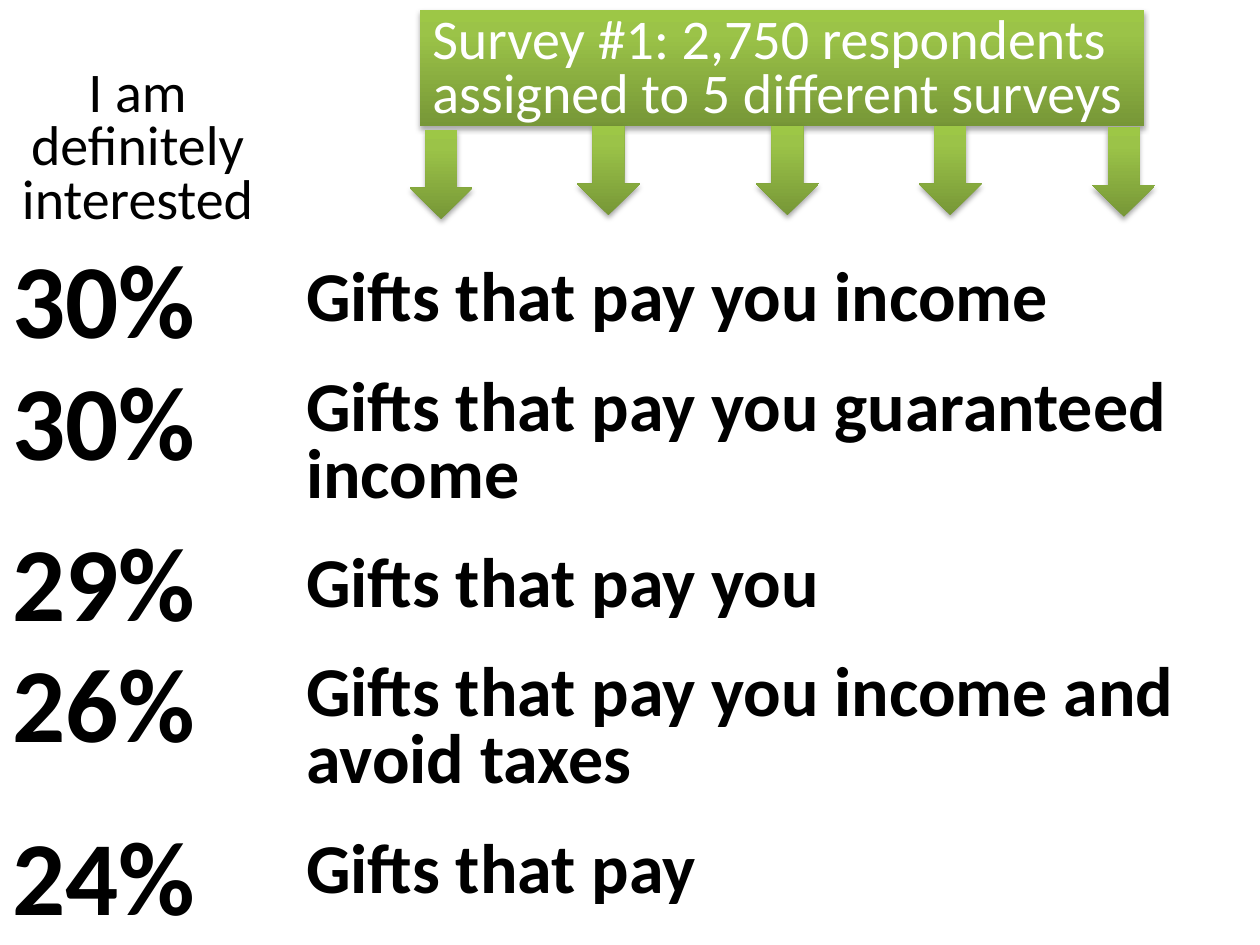
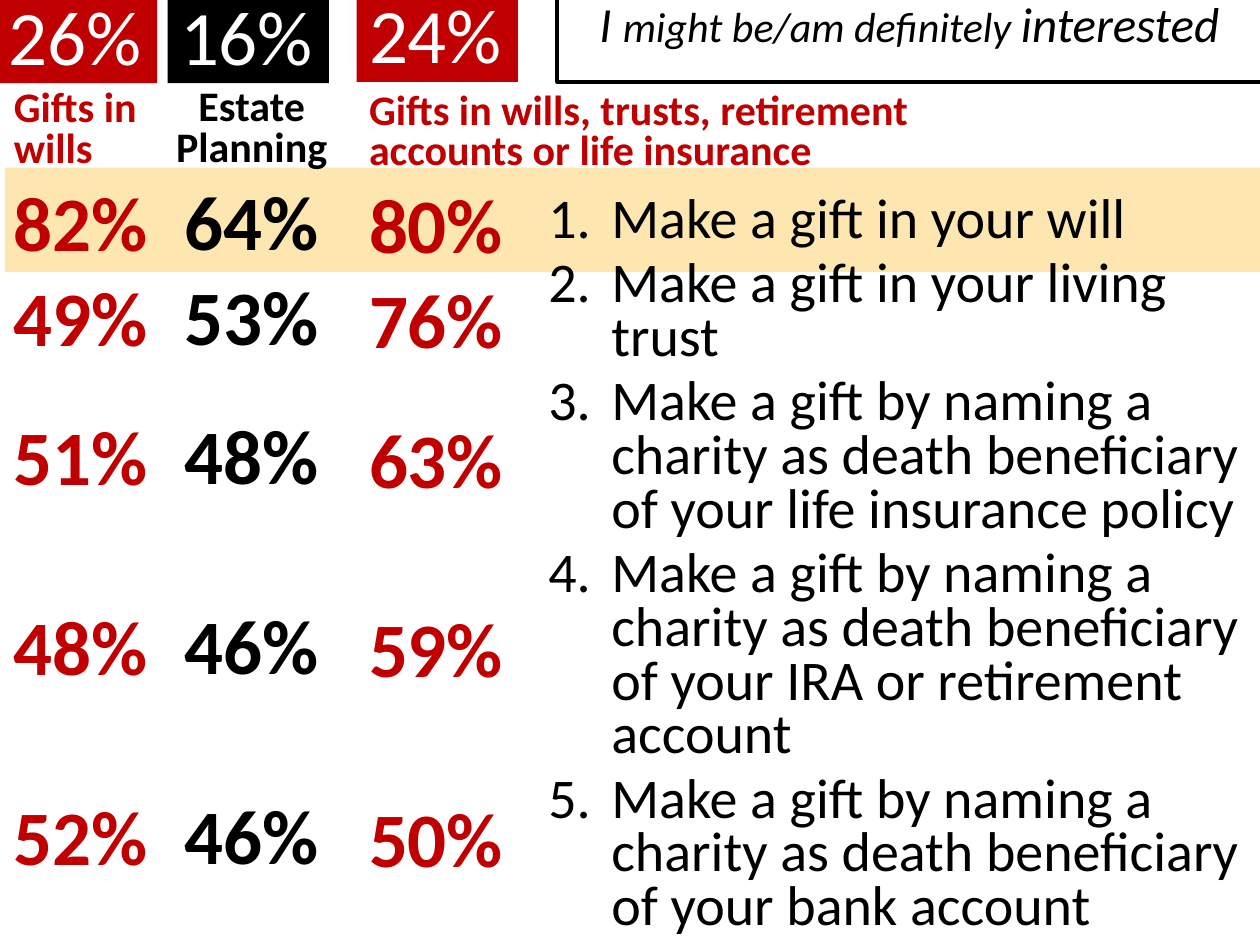
"""Builds two survey slides on interest in planned gifts."""
from copy import deepcopy

from lxml import etree
from pptx import Presentation
from pptx.dml.color import RGBColor
from pptx.enum.shapes import MSO_SHAPE
from pptx.enum.text import MSO_ANCHOR, MSO_AUTO_SIZE, PP_ALIGN
from pptx.oxml.ns import qn
from pptx.util import Cm, Pt

RECTANGLE = MSO_SHAPE.RECTANGLE
DOWN_ARROW = MSO_SHAPE.DOWN_ARROW
TOP = MSO_ANCHOR.TOP
NO_AUTOFIT = MSO_AUTO_SIZE.NONE
LEFT = PP_ALIGN.LEFT
CENTER = PP_ALIGN.CENTER

FONT = "Calibri"
LINE_SPACING = 0.8
COLORS = {
    "black": "000000",
    "white": "FFFFFF",
    "red": "C00000",
    "gold": "FDCE62",
    "dark green": "779737",
    "green": "9BC348",
    "light green": "9DC746",
}
GREEN_STOPS = [(0, "dark green"), (0.8, "green"), (1, "light green")]


def rgb(name):
    return RGBColor.from_string(COLORS[name])


def add_xml(parent, tag, **attributes):
    return etree.SubElement(parent, qn(tag), attributes)


def rows(texts, size, gap):
    return [([(text, size)], gap) for text in texts]


def wide_gap(skipped_size):
    return 24 + 0.96 * skipped_size


class SurveyDeck:
    """Holds the deck style and the current slide."""

    def __init__(self):
        self.deck = Presentation()
        self.deck.slide_width = Cm(25.4)
        self.deck.slide_height = Cm(19.05)
        self.page = None

    def add_page(self):
        self.page = self.deck.slides.add_slide(self.deck.slide_layouts[1])

    def place(self, shape, area):
        shape.left, shape.top, shape.width, shape.height = map(Cm, area)
        return shape

    def fill_text(self, shape, lines, color="black", bold=False, italic=False,
                  align=LEFT, numbered=False):
        frame = shape.text_frame
        frame.word_wrap = True
        frame.auto_size = NO_AUTOFIT
        frame.vertical_anchor = TOP
        for index, (spans, gap) in enumerate(lines):
            para = frame.add_paragraph() if index else frame.paragraphs[0]
            para.alignment = align
            para.line_spacing = LINE_SPACING
            para.space_before = Pt(0)
            para.space_after = Pt(gap)
            self.mark(para, numbered)
            for text, size in spans:
                span = para.add_run()
                span.text = text
                span.font.name = FONT
                span.font.size = Pt(size)
                span.font.bold = bold
                span.font.italic = italic
                span.font.color.rgb = rgb(color)

    def mark(self, para, numbered):
        properties = para._p.get_or_add_pPr()
        indent = Cm(1.27) if numbered else 0
        properties.set("marL", str(indent))
        properties.set("indent", str(-indent))
        if numbered:
            add_xml(properties, "a:buAutoNum", type="arabicPeriod")
        else:
            add_xml(properties, "a:buNone")

    def title(self, area, lines, **style):
        box = self.place(self.page.shapes.title, area)
        self.fill_text(box, lines, **style)
        return box

    def body(self, area, lines, **style):
        self.fill_text(self.place(self.page.placeholders[1], area), lines, **style)

    def text(self, area, lines, **style):
        box = self.page.shapes.add_textbox(*map(Cm, area))
        self.fill_text(box, lines, **style)

    def shape(self, kind, area):
        box = self.page.shapes.add_shape(kind, *map(Cm, area))
        box.shadow.inherit = False
        box.line.fill.background()
        return box

    def tile(self, area, text, color):
        box = self.shape(RECTANGLE, area)
        box.fill.solid()
        box.fill.fore_color.rgb = rgb(color)
        self.fill_text(box, rows([text], 44, 12), color="white")

    def band(self, area, color):
        box = self.shape(RECTANGLE, area)
        box.fill.solid()
        box.fill.fore_color.rgb = rgb(color)
        tint = box._element.spPr.find(".//" + qn("a:srgbClr"))
        add_xml(tint, "a:alpha", val="50000")
        self.page.shapes._spTree.insert(2, box._element)

    def arrow(self, area):
        self.glossy(self.shape(DOWN_ARROW, area))

    def glossy(self, box):
        box.fill.gradient()
        box.fill.gradient_angle = 90
        stop_list = box._element.spPr.find(".//" + qn("a:gsLst"))
        stop_list.append(deepcopy(stop_list[-1]))
        for stop, (position, color) in zip(box.fill.gradient_stops, GREEN_STOPS):
            stop.position = position
            stop.color.rgb = rgb(color)
        box.shadow.inherit = False
        effects = box._element.spPr.find(qn("a:effectLst"))
        shadow = add_xml(effects, "a:outerShdw", blurRad=str(Pt(3.1)),
                         dist=str(Pt(1.8)), dir="5400000", rotWithShape="0")
        shade = add_xml(shadow, "a:srgbClr", val=COLORS["black"])
        add_xml(shade, "a:alpha", val="35000")


def build_gift_wording(survey):
    survey.add_page()
    banner = survey.title(
        (8.46, 0.2, 14.61, 2.34),
        rows(["Survey #1: 2,750 respondents assigned to 5 different surveys"], 32, 24),
        color="white")
    survey.glossy(banner)
    wordings = ["Gifts that pay you income", "Gifts that pay you guaranteed income",
                "Gifts that pay you", "Gifts that pay you income and avoid taxes",
                "Gifts that pay"]
    survey.body((5.92, 5.28, 19.25, 13.34), rows(wordings, 40, 24), bold=True)
    survey.text((0.03, 1.27, 5.49, 3.07),
                rows(["I am definitely interested"], 32, 24), align=CENTER)
    shares = [("30%", 12), ("30%", wide_gap(10.5)), ("29%", 12),
              ("26%", wide_gap(18)), ("24%", 12)]
    survey.text((0, 5.08, 6.15, 12.07),
                [([(share, 60)], gap) for share, gap in shares], bold=True)
    for left, top in [(8.26, 2.62), (11.63, 2.54), (15.24, 2.54),
                      (18.52, 2.54), (22.02, 2.57)]:
        survey.arrow((left, top, 1.27, 1.8))


def build_gift_vehicles(survey):
    survey.add_page()
    survey.band((0.1, 3.38, 25.4, 2.11), "gold")
    interest = survey.title(
        (11.23, -0.03, 14.2, 1.68),
        [([("I ", 28), ("might be/am definitely ", 24), ("interested", 28)], 24)],
        italic=True, align=CENTER)
    interest.line.color.rgb = rgb("black")
    interest.line.width = Pt(2)
    naming = "Make a gift by naming a charity as death beneficiary of your "
    vehicles = ["Make a gift in your will", "Make a gift in your living trust",
                naming + "life insurance policy",
                naming + "IRA or retirement account",
                naming + "bank account"]
    survey.body((10.8, 3.81, 14.63, 1.96), rows(vehicles, 32, 6), numbered=True)

    gaps = [12, wide_gap(14), wide_gap(44), wide_gap(44), 12]
    columns = [
        ((0.03, 1.7, 3.38, 1.42), "Gifts in wills",
         ["82%", "49%", "51%", "48%", "52%"], "red", LEFT),
        ((2.74, 1.68, 4.67, 1.42), "Estate Planning",
         ["64%", "53%", "48%", "46%", "46%"], "black", CENTER),
        ((7.19, 1.75, 11.63, 1.42),
         "Gifts in wills, trusts, retirement accounts or life insurance",
         ["80%", "76%", "63%", "59%", "50%"], "red", LEFT),
    ]
    for area, heading, shares, color, align in columns:
        lines = rows([heading], 24, 12)
        lines += [([(share, 44)], gap) for share, gap in zip(shares, gaps)]
        survey.text(area, lines, color=color, bold=True, align=align)

    for left, top, share, color in [(-0.08, 0, "26%", "red"),
                                    (3.38, 0, "16%", "black"),
                                    (7.19, -0.03, "24%", "red")]:
        survey.tile((left, top, 3.25, 1.68), share, color)


def main():
    survey = SurveyDeck()
    build_gift_wording(survey)
    build_gift_vehicles(survey)
    survey.deck.save("out.pptx")


if __name__ == "__main__":
    main()
